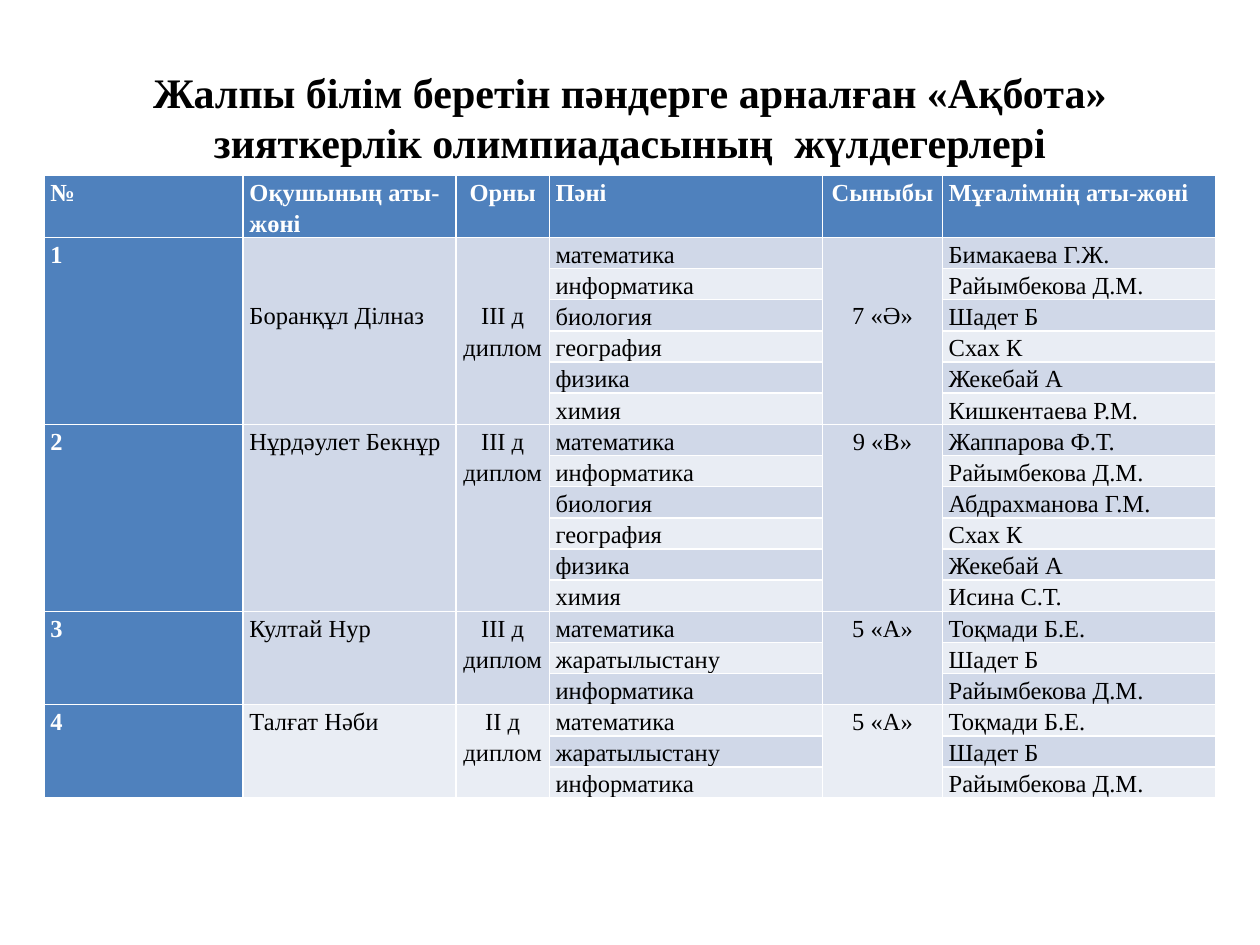
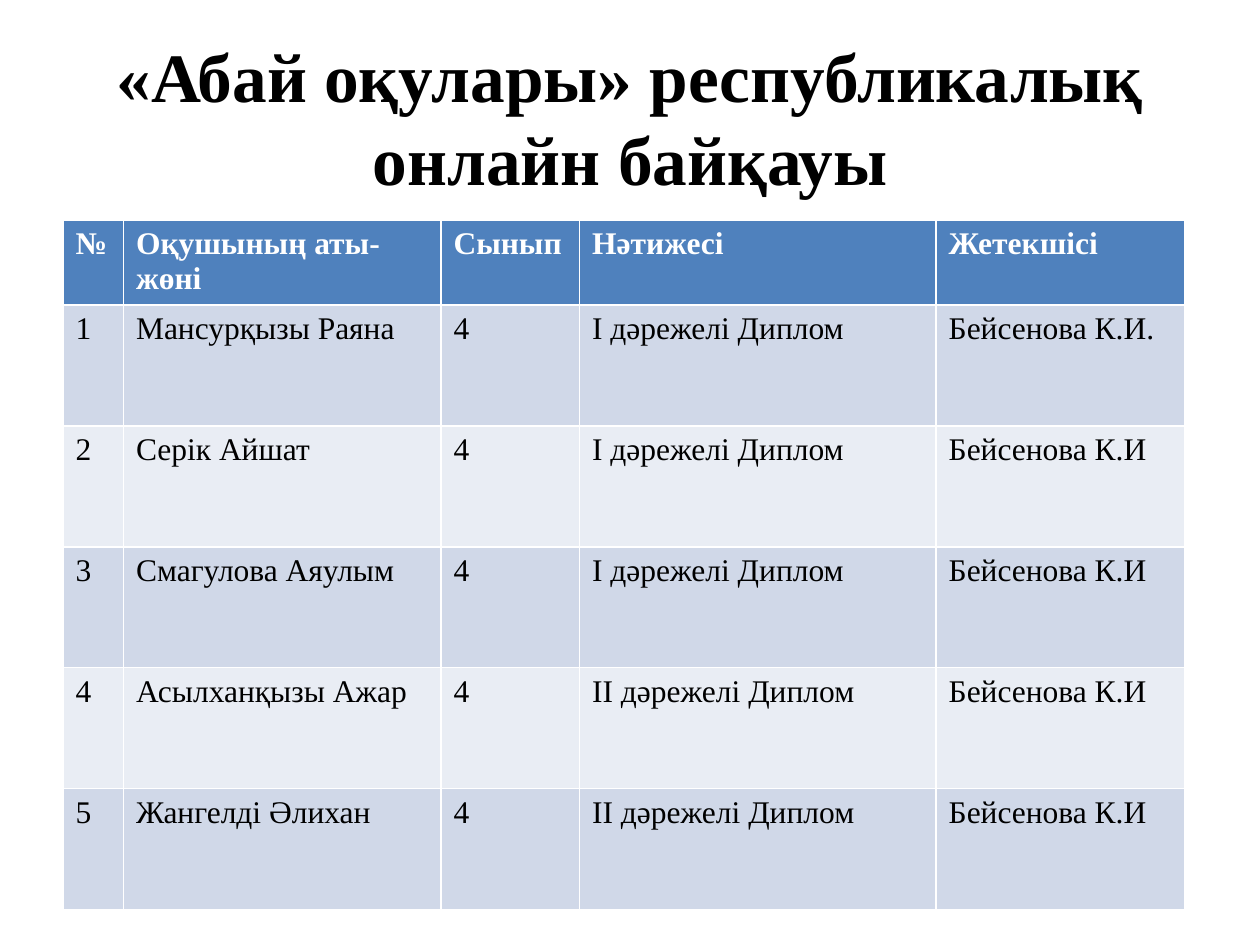
from pptx import Presentation
from pptx.dml.color import RGBColor
from pptx.enum.text import MSO_ANCHOR, MSO_AUTO_SIZE, PP_ALIGN
from pptx.util import Inches, Pt

LEFT, CENTER = PP_ALIGN.LEFT, PP_ALIGN.CENTER
MIDDLE = MSO_ANCHOR.MIDDLE
NO_FIT = MSO_AUTO_SIZE.NONE

BLUE = RGBColor(0x4F, 0x81, 0xBD)
DARK = RGBColor(0xD0, 0xD8, 0xE8)
LIGHT = RGBColor(0xE9, 0xED, 0xF4)
WHITE = RGBColor(0xFF, 0xFF, 0xFF)
BLACK = RGBColor(0x00, 0x00, 0x00)
FONT = "Times New Roman"
TITLE_ONLY = 5

# Each pupil: number, name, place, class, then (subject, teacher) pairs
PUPILS = [
    ("1", "Боранқұл Ділназ", "ІІІ д диплом", "7 «Ә»", [
        ("математика", "Бимакаева Г.Ж."),
        ("информатика", "Райымбекова Д.М."),
        ("биология", "Шадет Б"),
        ("география", "Схах К"),
        ("физика", "Жекебай А"),
        ("химия", "Кишкентаева Р.М.")]),
    ("2", "Нұрдәулет Бекнұр", "ІІІ д диплом", "9 «В»", [
        ("математика", "Жаппарова Ф.Т."),
        ("информатика", "Райымбекова Д.М."),
        ("биология", "Абдрахманова Г.М."),
        ("география", "Схах К"),
        ("физика", "Жекебай А"),
        ("химия", "Исина С.Т.")]),
    ("3", "Култай Нур", "ІІІ д диплом", "5 «А»", [
        ("математика", "Тоқмади Б.Е."),
        ("жаратылыстану", "Шадет Б"),
        ("информатика", "Райымбекова Д.М.")]),
    ("4", "Талғат Нәби", "ІІ д диплом", "5 «А»", [
        ("математика", "Тоқмади Б.Е."),
        ("жаратылыстану", "Шадет Б"),
        ("информатика", "Райымбекова Д.М.")]),
]
PUPIL_HEAD = ["№", "Оқушының аты-жөні", "Орны", "Пәні", "Сыныбы",
              "Мұғалімнің аты-жөні"]

READERS = [
    ("1", "Мансурқызы Раяна", "4", "І дәрежелі Диплом", "Бейсенова К.И."),
    ("2", "Серік Айшат", "4", "І дәрежелі Диплом", "Бейсенова К.И"),
    ("3", "Смагулова Аяулым", "4", "І дәрежелі Диплом", "Бейсенова К.И"),
    ("4", "Асылханқызы Ажар", "4", "ІІ дәрежелі Диплом", "Бейсенова К.И"),
    ("5", "Жангелді Әлихан", "4", "ІІ дәрежелі Диплом", "Бейсенова К.И"),
]
READER_HEAD = ["№", "Оқушының аты-жөні", "Сынып", "Нәтижесі", "Жетекшісі"]


def write(frame, text, size, color, bold, align=LEFT):
    para = frame.paragraphs[0]
    para.alignment = align
    run = para.add_run()
    run.text = text
    font = run.font
    font.name, font.size, font.bold = FONT, Pt(size), bold
    font.color.rgb = color


def add_slide(deck, title, size):
    slide = deck.slides.add_slide(deck.slide_layouts[TITLE_ONLY])
    shape = slide.shapes.title
    shape.left, shape.top = Inches(0.5), Inches(0.3)
    shape.width, shape.height = Inches(9), Inches(1.25)
    frame = shape.text_frame
    frame.auto_size = NO_FIT
    frame.vertical_anchor = MIDDLE
    write(frame, title, size, BLACK, True, CENTER)
    return slide


def add_grid(slide, box, cols, rows):
    """Add a table whose columns and rows have the given sizes in inches."""
    shape = slide.shapes.add_table(len(rows), len(cols), *map(Inches, box))
    table = shape.table
    for col, width in zip(table.columns, cols):
        col.width = Inches(width)
    for row, height in zip(table.rows, rows):
        row.height = Inches(height)
    shape.height = Inches(box[3])
    return table


def fill_cell(cell, text, size, fill, align=LEFT):
    """Write a cell; blue cells get bold white text."""
    cell.fill.solid()
    cell.fill.fore_color.rgb = fill
    strong = fill == BLUE
    write(cell.text_frame, text, size, WHITE if strong else BLACK, strong,
          align)


def band(row):
    return DARK if row % 2 else LIGHT


def add_pupils(slide, box):
    """Table with one merged block of rows for each pupil."""
    cols = [1.58, 1.69, 0.74, 2.17, 0.95, 2.17]
    count = sum(len(pupil[-1]) for pupil in PUPILS)
    table = add_grid(slide, box, cols, [0.38] + [0.19] * count)
    table.first_col = True

    def put(row, col, text, fill, drop=0):
        cell = table.cell(row, col)
        cell.margin_left = cell.margin_right = Inches(0.05)
        cell.margin_top, cell.margin_bottom = Inches(drop), 0
        fill_cell(cell, text, 14, fill, CENTER if col in (2, 4) else LEFT)
        cell.text_frame.paragraphs[0].line_spacing = 1.15

    for col, text in enumerate(PUPIL_HEAD):
        put(0, col, text, BLUE)
    top = 1
    for num, name, place, group, tests in PUPILS:
        last = top + len(tests) - 1
        drop = 0.49 if top == 1 else 0
        for col, text in ((0, num), (1, name), (2, place), (4, group)):
            table.cell(top, col).merge(table.cell(last, col))
            if col:
                put(top, col, text, band(top), drop)
            else:
                put(top, col, text, BLUE)
        for row, (test, coach) in enumerate(tests, top):
            put(row, 3, test, band(row))
            put(row, 5, coach, band(row))
        top = last + 1


def add_readers(slide, box):
    cols = [0.48, 2.52, 1.1, 2.83, 1.97]
    table = add_grid(slide, box, cols, [0.67] + [0.96] * len(READERS))
    for row, texts in enumerate([READER_HEAD] + READERS):
        for col, text in enumerate(texts):
            fill_cell(table.cell(row, col), text, 18,
                      band(row) if row else BLUE)


def main():
    deck = Presentation()
    deck.slide_width, deck.slide_height = Inches(10), Inches(7.5)
    slide = add_slide(deck, "Жалпы білім беретін пәндерге арналған «Ақбота» "
                      "зияткерлік олимпиадасының  жүлдегерлері", 24)
    add_pupils(slide, (0.35, 1.39, 9.29, 5.37))
    slide = add_slide(deck, "«Абай оқулары» республикалық онлайн байқауы",
                      39.6)
    add_readers(slide, (0.5, 1.75, 8.91, 5.49))
    deck.save("out.pptx")


if __name__ == "__main__":
    main()
